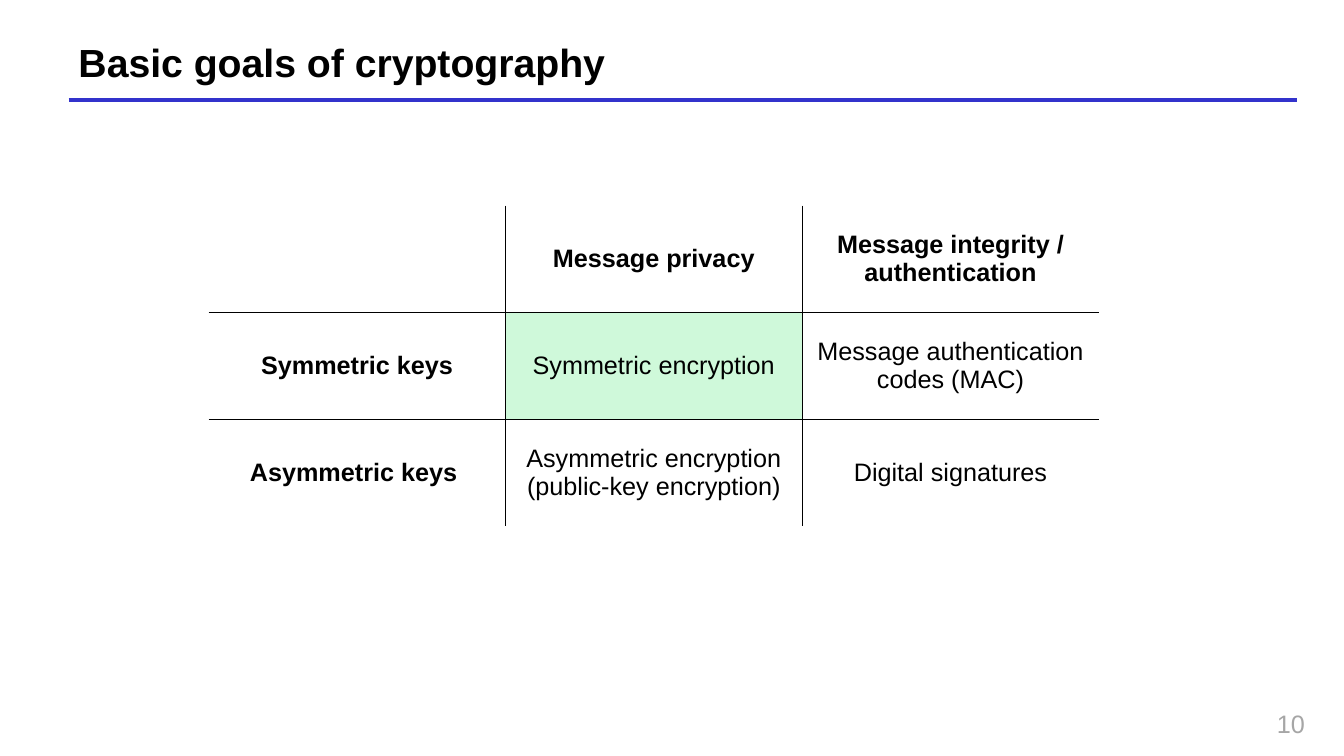
import dataclasses

import lxml.etree
import pptx
import pptx.dml.color
import pptx.enum.shapes
import pptx.enum.text
import pptx.oxml
import pptx.oxml.ns
import pptx.util

BLACK = pptx.dml.color.RGBColor(0x00, 0x00, 0x00)
GRAY = pptx.dml.color.RGBColor(0xA6, 0xA6, 0xA6)
BLUE = pptx.dml.color.RGBColor(0x33, 0x33, 0xCC)
GREEN = pptx.dml.color.RGBColor(0xCF, 0xF9, 0xDA)

Inches = pptx.util.Inches
Align = pptx.enum.text.PP_ALIGN
Anchor = pptx.enum.text.MSO_ANCHOR

COLUMN_WIDTH = 2.943
ROW_HEIGHT = 1.06
GOALS = [
    ["", "Message privacy", "Message integrity / authentication"],
    ["Symmetric keys", "Symmetric encryption", "Message authentication codes (MAC)"],
    ["Asymmetric keys ", "Asymmetric encryption (public-key encryption)", "Digital signatures"],
]
HIGHLIGHTED_CELL = (1, 1)


@dataclasses.dataclass(frozen=True)
class Label:
    text: str
    left: float
    top: float
    width: float
    height: float
    size: int
    color: pptx.dml.color.RGBColor
    bold: bool
    align: Align
    anchor: Anchor


LABELS = [
    Label("Basic goals of cryptography", 0.68, 0.36, 12.18, 0.5, 28, BLACK, True, Align.LEFT, Anchor.MIDDLE),
    Label("10", 10.26, 6.98, 2.78, 0.36, 18, GRAY, False, Align.RIGHT, Anchor.TOP),
]


def write_text(paragraph, text: str, size: int, color: pptx.dml.color.RGBColor, bold: bool, align: Align) -> None:
    paragraph.alignment = align
    run = paragraph.add_run()
    run.text = text
    run.font.color.rgb = color
    font_format = {"name": "Arial", "size": pptx.util.Pt(size), "bold": bold}
    for attribute, value in font_format.items():
        setattr(run.font, attribute, value)


def draw_label(slide, label: Label) -> None:
    bounds = (label.left, label.top, label.width, label.height)
    shape = slide.shapes.add_textbox(*map(Inches, bounds))
    frame_format = {"word_wrap": True, "vertical_anchor": label.anchor}
    for attribute, value in frame_format.items():
        setattr(shape.text_frame, attribute, value)
    write_text(shape.text_frame.paragraphs[0], label.text, label.size, label.color, label.bold, label.align)


def draw_title_rule(slide) -> None:
    straight = pptx.enum.shapes.MSO_CONNECTOR.STRAIGHT
    rule = slide.shapes.add_connector(straight, *map(Inches, (0.68, 0.99, 12.86, 0.99)))
    rule.line.color.rgb = BLUE
    rule.line.width = pptx.util.Pt(3)
    properties = rule._element.spPr
    lxml.etree.SubElement(properties, pptx.oxml.ns.qn("a:effectLst"))


def set_borders(cell, visible_sides: dict[str, bool]) -> None:
    properties = cell._tc.get_or_add_tcPr()
    for side, visible in visible_sides.items():
        fill = f'<a:solidFill><a:srgbClr val="{BLACK}"/></a:solidFill>' if visible else "<a:noFill/>"
        border = f'<a:ln{side} {pptx.oxml.ns.nsdecls("a")} w="12700">{fill}</a:ln{side}>'
        properties.append(pptx.oxml.parse_xml(border))


def draw_goals_table(slide) -> None:
    row_count, column_count = len(GOALS), len(GOALS[0])
    size = (column_count * COLUMN_WIDTH, row_count * ROW_HEIGHT)
    frame = slide.shapes.add_table(row_count, column_count, *map(Inches, (2.07, 2.04, *size)))
    table = frame.table
    for attribute, value in {"first_row": False, "horz_banding": False}.items():
        setattr(table, attribute, value)
    for row_index, row in enumerate(GOALS):
        for column_index, text in enumerate(row):
            cell = table.cell(row_index, column_index)
            cell.vertical_anchor = Anchor.MIDDLE
            set_borders(cell, {
                "L": column_index > 0,
                "R": column_index < column_count - 1,
                "T": row_index > 0,
                "B": row_index < row_count - 1,
            })
            if (row_index, column_index) == HIGHLIGHTED_CELL:
                cell.fill.solid()
                cell.fill.fore_color.rgb = GREEN
            else:
                cell.fill.background()
            if text:
                is_heading = row_index == 0 or column_index == 0
                write_text(cell.text_frame.paragraphs[0], text, 18, BLACK, is_heading, Align.CENTER)


def main() -> None:
    presentation = pptx.Presentation()
    slide_size = {"slide_width": Inches(13.33), "slide_height": Inches(7.5)}
    for attribute, value in slide_size.items():
        setattr(presentation, attribute, value)
    slide = presentation.slides.add_slide(presentation.slide_layouts[6])
    draw_title_rule(slide)
    for label in LABELS:
        draw_label(slide, label)
    draw_goals_table(slide)
    presentation.save("out.pptx")


if __name__ == "__main__":
    main()
